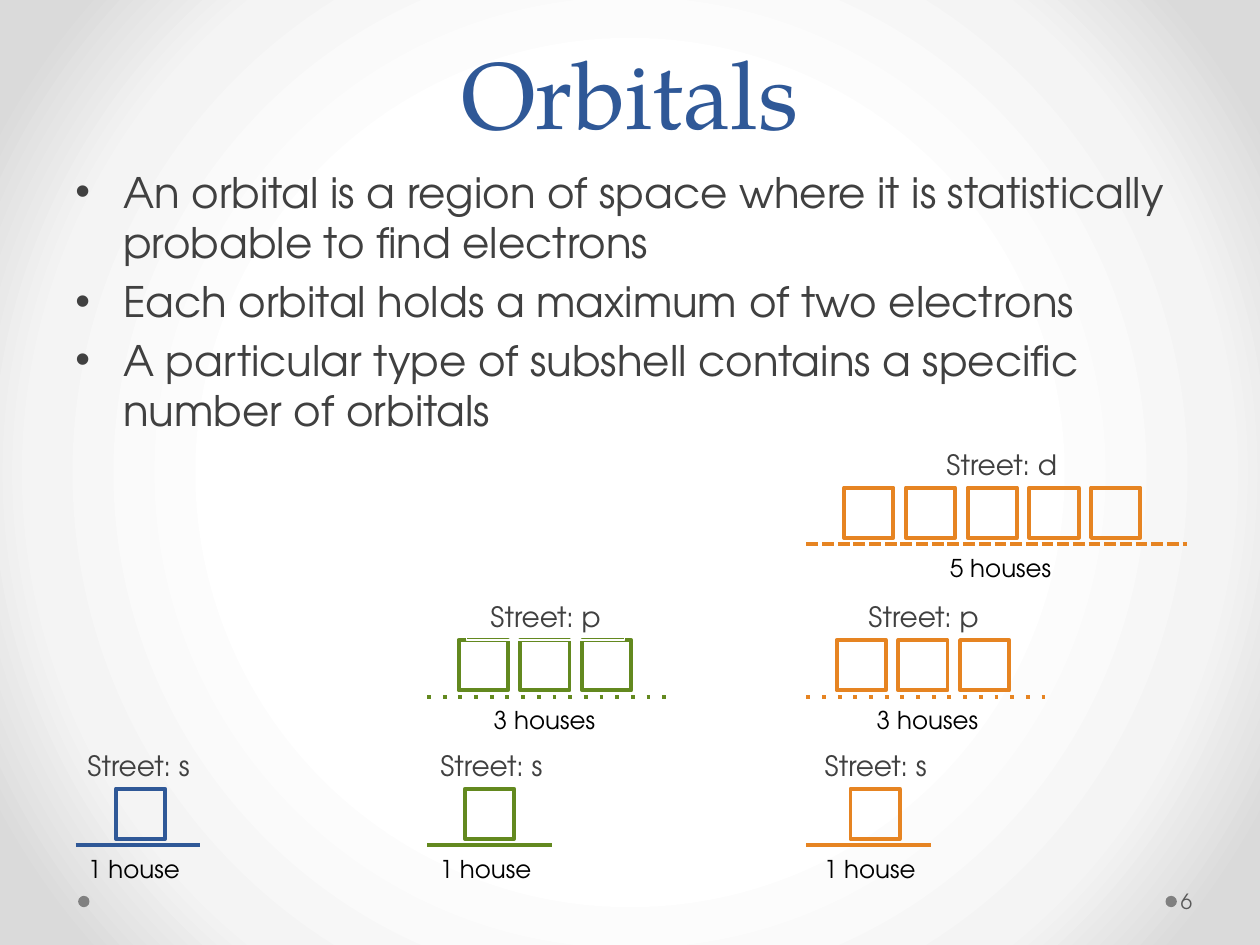
from lxml.etree import SubElement
from pptx import Presentation
from pptx.dml.color import RGBColor
from pptx.enum.shapes import MSO_CONNECTOR, MSO_SHAPE
from pptx.enum.text import MSO_ANCHOR, MSO_AUTO_SIZE, PP_ALIGN
from pptx.oxml.ns import qn
from pptx.util import Inches, Pt

BLUE = RGBColor(0x2F, 0x58, 0x97)
GREEN = RGBColor(0x63, 0x89, 0x1F)
ORANGE = RGBColor(0xE6, 0x84, 0x22)
DARK = RGBColor(0x40, 0x40, 0x40)
MID = RGBColor(0x59, 0x59, 0x59)
GRAY = RGBColor(0x80, 0x80, 0x80)
BLACK = RGBColor(0, 0, 0)
WHITE = RGBColor(0xFF, 0xFF, 0xFF)
HEADING_FONT, BODY_FONT = "TeX Gyre Pagella", "TeX Gyre Adventor"

GRADIENT = [(50, "FFFFFF"), (76, "F4F4F4"), (92, "DADADA")]
BULLETS = [
    "An orbital is a region of space where it is statistically probable to find electrons",
    "Each orbital holds a maximum of two electrons",
    "A particular type of subshell contains a specific number of orbitals",
]
SUBSHELLS = {
    "s": dict(houses=1, top=6.26, road_width=0.99, dash="solid"),
    "p": dict(houses=3, top=5.08, road_width=1.93, dash="dot"),
    "d": dict(houses=5, top=3.87, road_width=3.02, dash="sysDash"),
}
# subshell, colour, road left, first house left, label centre, count left, label border
STREETS = [
    ("s", BLUE, 0.6, 0.92, 1.1, 0.6, None),
    ("s", GREEN, 3.39, 3.69, 3.9, 3.39, None),
    ("p", GREEN, 3.39, 3.64, 4.33, 3.82, WHITE),
    ("s", ORANGE, 6.4, 6.75, 6.95, 6.44, None),
    ("p", ORANGE, 6.4, 6.64, 7.33, 6.86, None),
    ("d", ORANGE, 6.4, 6.7, 7.95, 7.44, None),
]
HOUSE_WIDTH, HOUSE_HEIGHT, HOUSE_PITCH = 0.39, 0.4, 0.49
LABEL_WIDTH, LABEL_HEIGHT = 1.25, 0.37
ROAD_DROP, COUNT_DROP = 0.45, 0.49
DOT_LEFTS = [0.62, 9.25]


def write(paragraph, text, size, color, font=BODY_FONT, align=PP_ALIGN.LEFT):
    paragraph.alignment = align
    run = paragraph.add_run()
    run.text = text
    run.font.size = Pt(size)
    run.font.name = font
    run.font.color.rgb = color


def place(shape, left, top, width, height):
    shape.left, shape.top = Inches(left), Inches(top)
    shape.width, shape.height = Inches(width), Inches(height)


def add_text(slide, box, text, wrap=True, **style):
    shape = slide.shapes.add_textbox(*map(Inches, box))
    shape.text_frame.word_wrap = wrap
    write(shape.text_frame.paragraphs[0], text, **style)
    return shape


def add_preset(slide, kind, box, fill=None, line=None):
    shape = slide.shapes.add_shape(kind, *map(Inches, box))
    shape.shadow.inherit = False
    if fill is None:
        shape.fill.background()
    else:
        shape.fill.solid()
        shape.fill.fore_color.rgb = fill
    if line is None:
        shape.line.fill.background()
    else:
        shape.line.color.rgb = line
        shape.line.width = Pt(2.25)


def add_road(slide, left, top, width, color, dash):
    y = Inches(top)
    road = slide.shapes.add_connector(
        MSO_CONNECTOR.STRAIGHT, Inches(left), y, Inches(left + width), y)
    road.line.color.rgb = color
    road.line.width = Pt(2.25)
    properties = road.element.spPr
    SubElement(properties.find(qn("a:ln")), qn("a:prstDash"), val=dash)
    SubElement(properties, qn("a:effectLst"))


def set_background(slide):
    slide.background.fill.gradient()
    gradient = next(slide.element.iter(qn("a:gradFill")))
    for child in list(gradient):
        gradient.remove(child)
    stops = SubElement(gradient, qn("a:gsLst"))
    for position, color in GRADIENT:
        stop = SubElement(stops, qn("a:gs"), pos=str(position * 1000))
        SubElement(stop, qn("a:srgbClr"), val=color)
    circle = SubElement(gradient, qn("a:path"), path="circle")
    SubElement(circle, qn("a:fillToRect"), l="50000", t="50000", r="50000", b="50000")


def add_title(slide):
    title = slide.shapes.title
    place(title, 0.5, 0.03, 9, 1.2)
    frame = title.text_frame
    frame.auto_size = MSO_AUTO_SIZE.NONE
    frame.vertical_anchor = MSO_ANCHOR.BOTTOM
    paragraph = frame.paragraphs[0]
    paragraph.line_spacing = Pt(58)
    write(paragraph, "Orbitals", 54, BLUE, HEADING_FONT, PP_ALIGN.CENTER)


def add_bullets(slide):
    frame = slide.shapes.add_textbox(*map(Inches, (0.5, 1.27, 9, 4.95))).text_frame
    frame.word_wrap = True
    for index, text in enumerate(BULLETS):
        paragraph = frame.add_paragraph() if index else frame.paragraphs[0]
        write(paragraph, text, 24, DARK)
        paragraph.space_before = Pt(4.8)
        properties = paragraph._p.get_or_add_pPr()
        properties.set("marL", str(Inches(0.38)))
        properties.set("indent", str(Inches(-0.38)))
        SubElement(properties, qn("a:buFont"), typeface="Arial")
        SubElement(properties, qn("a:buChar"), char="•")


def add_street(slide, name, color, road_left, house_left, center, count_left, border):
    subshell = SUBSHELLS[name]
    houses, top = subshell["houses"], subshell["top"]
    for index in range(houses):
        left = house_left + index * HOUSE_PITCH
        add_preset(slide, MSO_SHAPE.RECTANGLE,
                   (left, top, HOUSE_WIDTH, HOUSE_HEIGHT), line=color)
    add_road(slide, road_left, top + ROAD_DROP, subshell["road_width"], color,
             subshell["dash"])
    label = add_text(
        slide, (center - LABEL_WIDTH / 2, top - LABEL_HEIGHT, LABEL_WIDTH, LABEL_HEIGHT),
        f"Street: {name}", size=16, color=DARK, align=PP_ALIGN.CENTER)
    if border is not None:
        label.line.color.rgb = border
        label.line.width = Pt(0.75)
    noun, width = ("house", 0.94) if houses == 1 else ("houses", 1.01)
    add_text(slide, (count_left, top + COUNT_DROP - 0.02, width, 0.34),
             f"{houses} {noun}", wrap=False, size=14, color=BLACK)


def main():
    presentation = Presentation()
    presentation.slide_width, presentation.slide_height = Inches(10), Inches(7.5)
    slide = presentation.slides.add_slide(presentation.slide_layouts[5])
    set_background(slide)
    for left in DOT_LEFTS:
        add_preset(slide, MSO_SHAPE.OVAL, (left, 7.11, 0.09, 0.09), fill=GRAY)
    add_title(slide)
    add_bullets(slide)
    for street in STREETS:
        add_street(slide, *street)
    number = add_text(slide, (9.34, 6.95, 0.61, 0.4), "6", size=12, color=MID)
    number.text_frame.margin_left = Inches(0.03)
    number.text_frame.margin_right = Inches(0.05)
    number.text_frame.vertical_anchor = MSO_ANCHOR.MIDDLE
    presentation.save("out.pptx")


if __name__ == "__main__":
    main()
